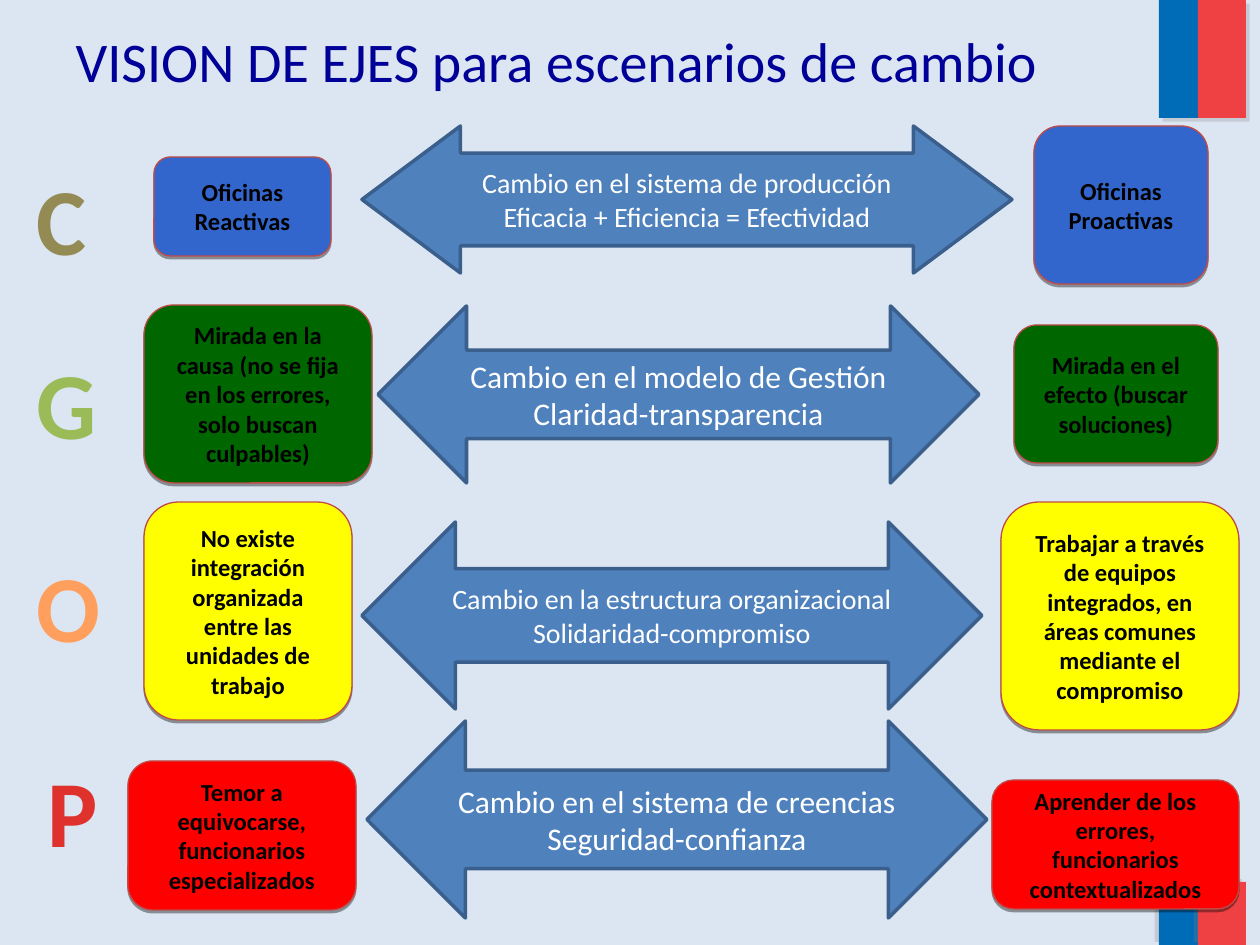
from lxml import etree
from pptx import Presentation, util as u
from pptx.dml.color import RGBColor
from pptx.enum import shapes, text
from pptx.oxml.ns import qn

PX = 914400 / 126
COLORS = {
    "back": "DCE6F2", "title": "000099", "flag_blue": "006CB7", "flag_red": "EF4144",
    "flag_shadow": "808080", "black": "000000", "white": "FFFFFF", "edge": "BE4B48",
    "arrow": "4F81BD", "arrow_edge": "3A5F8C",
    "blue": "3366CC", "green": "006600", "yellow": "FFFF00", "red": "FF0000",
    "C": "948A54", "G": "9BBB59", "O": "FF9F5D", "P": "E0322D",
}


def add_block(page, kind, place, fill, edge=None, width=0, shadow=None):
    block = page.shapes.add_shape(kind, *[round(v * PX) for v in place])
    block.shadow.inherit = False
    block.fill.solid()
    block.fill.fore_color.rgb = RGBColor.from_string(COLORS[fill])
    if edge:
        block.line.color.rgb = RGBColor.from_string(COLORS[edge])
        block.line.width = u.Pt(width)
    else:
        block.line.fill.background()
    if shadow:
        color, alpha, distance, angle = shadow
        effects = block._element.spPr.find(qn("a:effectLst"))
        outer = etree.SubElement(effects, qn("a:outerShdw"), blurRad="0",
                                 dist=str(u.Pt(distance)), dir=str(angle * 60000),
                                 rotWithShape="0")
        tint = etree.SubElement(outer, qn("a:srgbClr"), val=COLORS[color])
        etree.SubElement(tint, qn("a:alpha"), val=str(alpha * 1000))
    return block


def write(box, lines, size, color, bold=False, align=text.PP_ALIGN.CENTER,
          anchor=text.MSO_ANCHOR.MIDDLE, wrap=True):
    frame = box.text_frame
    frame.word_wrap = wrap
    frame.vertical_anchor = anchor
    for number, line in enumerate(lines):
        para = frame.add_paragraph() if number else frame.paragraphs[0]
        para.alignment = align
        span = para.add_run()
        span.text = line
        span.font.name = "Calibri"
        span.font.size = u.Pt(size)
        span.font.bold = bold
        span.font.color.rgb = RGBColor.from_string(COLORS[color])


deck = Presentation()
deck.slide_width, deck.slide_height = u.Inches(10), u.Inches(7.5)
page = deck.slides.add_slide(deck.slide_layouts[5])
page.background.fill.solid()
page.background.fill.fore_color.rgb = RGBColor.from_string(COLORS["back"])

for top, height, angle in [(0, 118, 45), (882, 63, 215)]:
    for left, width, color in [(1159, 39, "flag_blue"), (1198, 48, "flag_red")]:
        add_block(page, shapes.MSO_SHAPE.RECTANGLE, (left, top, width, height), color,
                  shadow=("flag_shadow", 25, 3, angle))

title = page.shapes.title
title.left, title.top, title.width, title.height = [round(v * PX) for v in (63, 21, 1134, 78)]
write(title, ["VISION DE EJES para escenarios de cambio"], 32, "title",
      align=text.PP_ALIGN.LEFT)

axes = [
    ("P", (34, 747, 77, 127), "red",
     (128, 761, 228, 149), "Temor a equivocarse, funcionarios especializados",
     (367, 721, 620, 197), 18, ["Cambio en el sistema de creencias", "Seguridad-confianza"],
     (992, 780, 247, 129), "Aprender de los errores, funcionarios contextualizados"),
    ("O", (24, 542, 89, 127), "yellow",
     (144, 502, 208, 218), "No existe integración organizada entre las unidades de trabajo",
     (362, 522, 620, 187), 16,
     ["Cambio en la estructura organizacional", "Solidaridad-compromiso"],
     (1001, 502, 238, 228),
     "Trabajar a través de equipos integrados, en áreas comunes mediante el compromiso"),
    ("G", (24, 339, 86, 127), "green",
     (144, 305, 228, 178),
     "Mirada en la causa (no se fija en los errores, solo buscan culpables)",
     (378, 306, 601, 177), 18, ["Cambio en el modelo de Gestión", "Claridad-transparencia"],
     (1014, 325, 204, 138), "Mirada en el efecto (buscar soluciones)"),
    ("C", (24, 155, 76, 127), "blue",
     (154, 157, 177, 99), "Oficinas Reactivas",
     (362, 126, 650, 147), 16,
     ["Cambio en el sistema de producción", "Eficacia + Eficiencia = Efectividad"],
     (1034, 126, 174, 158), "Oficinas Proactivas"),
]
for (letter, letter_place, color, before_place, before, arrow_place, size, change,
     after_place, after) in axes:
    initial = page.shapes.add_textbox(*[round(v * PX) for v in letter_place])
    write(initial, [letter], 54, letter, bold=True, anchor=text.MSO_ANCHOR.TOP, wrap=False)

    for place, words in [(after_place, after), (before_place, before)]:
        state = add_block(page, shapes.MSO_SHAPE.ROUNDED_RECTANGLE, place, color,
                          "edge", 0.75, ("black", 38, 1.6, 90))
        write(state, [words], 14, "black", bold=True)

    arrow = add_block(page, shapes.MSO_SHAPE.LEFT_RIGHT_ARROW, arrow_place, "arrow",
                      "arrow_edge", 2)
    if letter == "C":
        arrow.adjustments[0], arrow.adjustments[1] = 0.63, 0.67
    write(arrow, change, size, "white")

deck.save("out.pptx")
